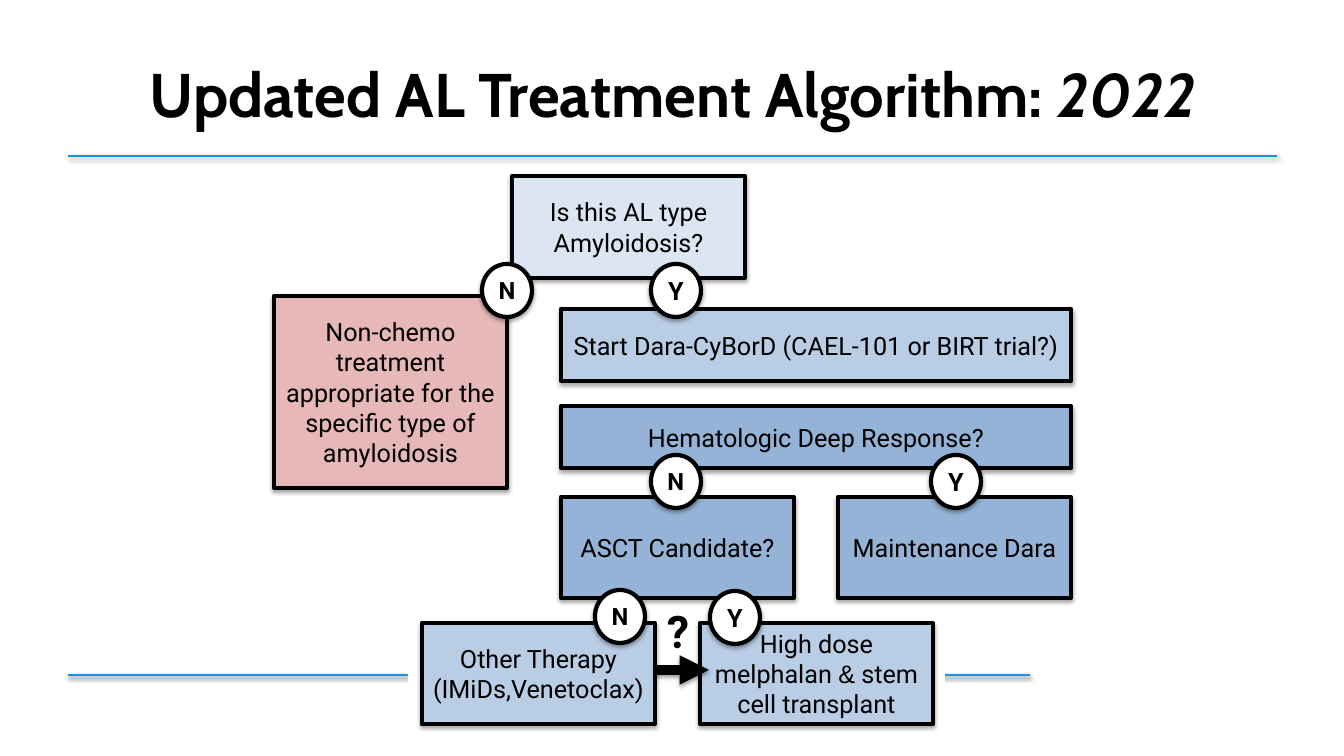
"""Build the AL amyloidosis treatment algorithm slide."""
import dataclasses

import pptx
import pptx.dml.color
import pptx.enum.shapes
import pptx.enum.text
import pptx.oxml
import pptx.oxml.ns
import pptx.util

SHAPE = pptx.enum.shapes.MSO_SHAPE
ALIGN = pptx.enum.text.PP_ALIGN
ANCHOR = pptx.enum.text.MSO_ANCHOR


@dataclasses.dataclass(frozen=True)
class Theme:
    title_font: str = "Cabin"
    body_font: str = "Roboto"
    symbol_font: str = "Arial"
    ink: str = "000000"
    paper: str = "FFFFFF"
    rule: str = "1792DD"
    pale: str = "DCE6F2"
    light: str = "B9CDE5"
    mid: str = "95B3D7"
    rose: str = "E6B9B8"
    title_size: int = 44
    mark_size: int = 32
    body_size: int = 18
    no_size: int = 17
    border: float = 3
    rule_width: float = 1.5
    arrow_width: float = 7


def px(n):
    return pptx.util.Emu(round(n * 914400 / 100.8))


def rgb(color):
    return pptx.dml.color.RGBColor.from_string(color)


class Flowchart:
    def __init__(self, slide, theme):
        self.s = slide
        self.theme = theme

    def shadow(self, sp, alpha, dist):
        spPr = sp._element.spPr
        for old in spPr.findall(pptx.oxml.ns.qn("a:effectLst")):
            spPr.remove(old)
        spPr.append(pptx.oxml.parse_xml(
            f'<a:effectLst {pptx.oxml.ns.nsdecls("a")}>'
            f'<a:outerShdw blurRad="{pptx.util.Pt(3.1)}" dist="{pptx.util.Pt(dist)}" '
            f'dir="5400000" rotWithShape="0"><a:srgbClr val="{self.theme.ink}">'
            f'<a:alpha val="{alpha * 1000}"/></a:srgbClr></a:outerShdw></a:effectLst>'))

    def format_run(self, r, size, font=None, bold=False, italic=False):
        r.font.name = font or self.theme.body_font
        r.font.size = pptx.util.Pt(size)
        r.font.bold = bold
        r.font.italic = italic
        r.font.color.rgb = rgb(self.theme.ink)

    def label(self, tf, lines, size, bold=False):
        tf.text = "\n".join(lines)
        tf.vertical_anchor = ANCHOR.MIDDLE
        for p in tf.paragraphs:
            p.alignment = ALIGN.CENTER
            for r in p.runs:
                self.format_run(r, size, bold=bold)

    def title(self, text, year):
        sp = self.s.shapes.add_textbox(px(68), px(30), px(1210), px(126))
        tf = sp.text_frame
        tf.word_wrap = True
        tf.vertical_anchor = ANCHOR.MIDDLE
        p = tf.paragraphs[0]
        p.alignment = ALIGN.CENTER
        for words, italic in ((text, False), (year, True)):
            r = p.add_run()
            r.text = words
            self.format_run(r, self.theme.title_size, self.theme.title_font, True, italic)

    def shape(self, kind, x, y, w, h, fill):
        sp = self.s.shapes.add_shape(kind, px(x), px(y), px(w), px(h))
        sp.shadow.inherit = False
        sp.fill.solid()
        sp.fill.fore_color.rgb = rgb(fill)
        sp.line.fill.background()
        return sp

    def outline(self, sp):
        sp.line.color.rgb = rgb(self.theme.ink)
        sp.line.width = pptx.util.Pt(self.theme.border)
        self.shadow(sp, 35, 1.8)

    def box(self, x, y, w, h, fill, *lines):
        sp = self.shape(SHAPE.RECTANGLE, x, y, w, h, fill)
        self.outline(sp)
        self.label(sp.text_frame, lines, self.theme.body_size)
        for p in sp.text_frame.paragraphs:
            self.split_symbol(p)

    def split_symbol(self, p):
        before, symbol, after = p.text.partition("&")
        if symbol:
            p.runs[0].text = before
            for words, font in ((symbol, self.theme.symbol_font), (after, None)):
                r = p.add_run()
                r.text = words
                self.format_run(r, self.theme.body_size, font)

    def answer(self, x, y, letter):
        sp = self.shape(SHAPE.OVAL, x, y, 50, 53, self.theme.paper)
        self.outline(sp)
        tf = sp.text_frame
        tf.margin_left = tf.margin_right = tf.margin_top = tf.margin_bottom = 0
        size = self.theme.no_size if letter == "N" else self.theme.body_size
        self.label(tf, [letter], size, bold=True)

    def line(self, x1, x2, y, color, width, arrow=False):
        cx = self.s.shapes.add_connector(
            pptx.enum.shapes.MSO_CONNECTOR.STRAIGHT, px(x1), px(y), px(x2), px(y))
        cx.line.color.rgb = rgb(color)
        cx.line.width = pptx.util.Pt(width)
        if arrow:
            ln = cx._element.spPr.find(pptx.oxml.ns.qn("a:ln"))
            ln.append(pptx.oxml.parse_xml(
                f'<a:tailEnd {pptx.oxml.ns.nsdecls("a")} type="triangle"/>'))
        self.shadow(cx, 38, 1.6)

    def mark(self, x, y, w, h, text):
        sp = self.s.shapes.add_textbox(px(x), px(y), px(w), px(h))
        tf = sp.text_frame
        tf.word_wrap = False
        tf.text = text
        self.format_run(tf.paragraphs[0].runs[0], self.theme.mark_size, bold=True)


def main():
    prs = pptx.Presentation()
    prs.slide_width, prs.slide_height = px(1344), px(756)
    t = Theme()
    chart = Flowchart(prs.slides.add_slide(prs.slide_layouts[6]), t)

    for right, y in ((1277, 156), (1030, 675)):
        chart.line(68, right, y, t.rule, t.rule_width)
    chart.title("Updated AL Treatment Algorithm: ", "2022")
    chart.shape(SHAPE.RECTANGLE, 408, 612, 537, 119, t.paper)

    narrow, wide = 233, 510
    for box in (
        (512, 176, narrow, 102, t.pale, "Is this AL type Amyloidosis?"),
        (561, 406, wide, 62, t.mid, "Hematologic Deep Response?"),
        (561, 497, narrow, 101, t.mid, "ASCT Candidate?"),
        (838, 497, narrow, 101, t.mid, "Maintenance Dara"),
        (274, 296, narrow, 192, t.rose,
         "Non-chemo treatment appropriate for the specific type of amyloidosis"),
        (561, 309, wide, 72, t.light, "Start Dara-CyBorD (CAEL-101 or BIRT trial?)"),
        (422, 623, narrow, 101, t.light, "Other Therapy", "(IMiDs,Venetoclax)"),
        (700, 623, narrow, 101, t.light, "High dose melphalan & stem cell transplant"),
    ):
        chart.box(*box)

    for x, y, letter in ((482, 264, "N"), (651, 264, "Y"), (651, 455, "N"),
                         (931, 455, "Y"), (595, 590, "N"), (710, 591, "Y")):
        chart.answer(x, y, letter)

    chart.line(655, 709, 670, t.ink, t.arrow_width, arrow=True)
    chart.mark(657, 599, 40, 65, "?")
    prs.save("out.pptx")


if __name__ == "__main__":
    main()
